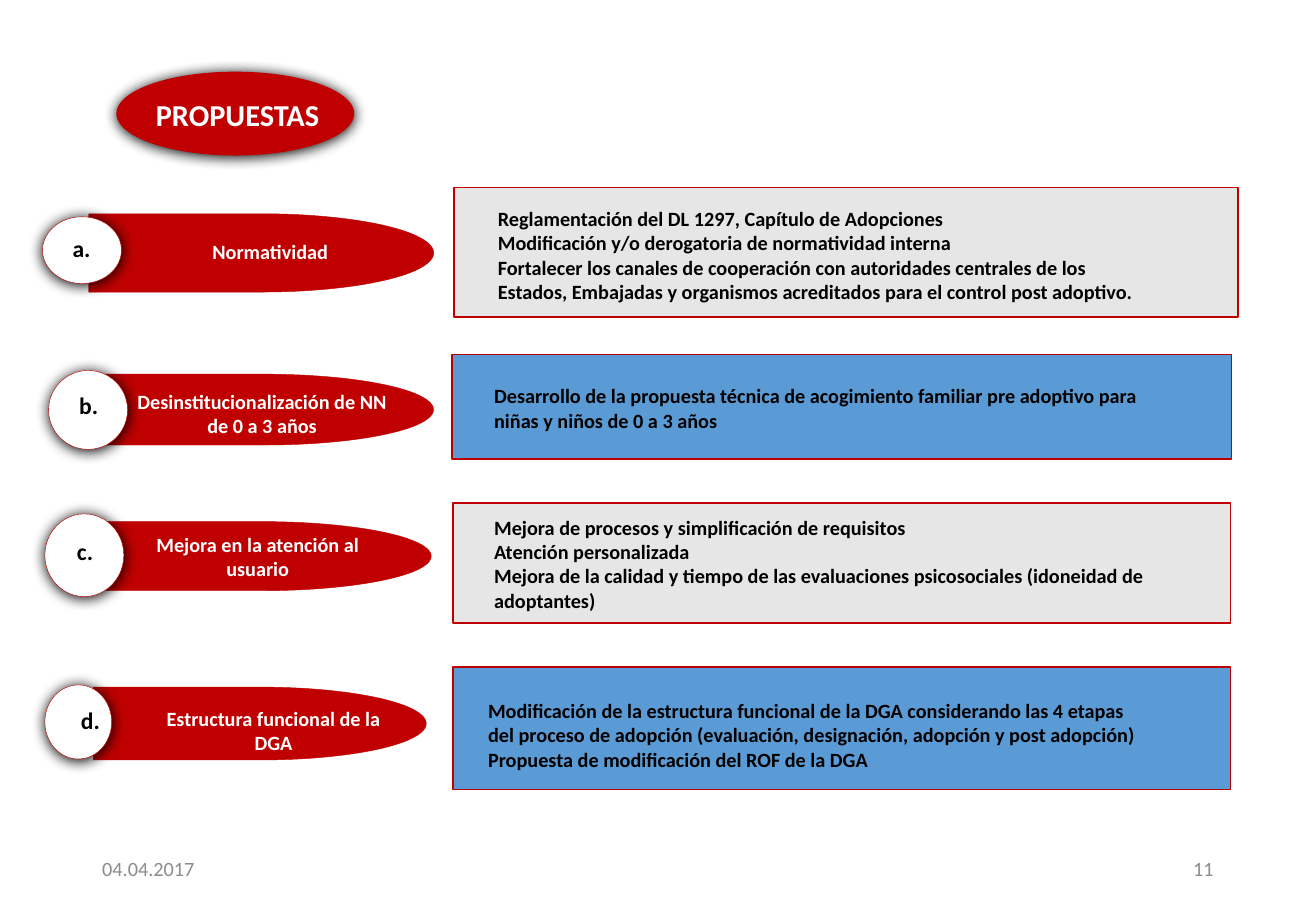
from pptx import Presentation
from pptx.dml.color import RGBColor
from pptx.enum.shapes import MSO_SHAPE
from pptx.enum.text import MSO_ANCHOR, MSO_AUTO_SIZE, PP_ALIGN
from pptx.oxml import parse_xml
from pptx.util import Pt

COLORS = {
    "red": "C00000", "gray": "E7E6E6", "blue": "5B9BD5",
    "white": "FFFFFF", "black": "000000", "footer": "8C8C8C",
}
SHADOW = (
    '<a:outerShdw xmlns:a="http://schemas.openxmlformats.org/drawingml/2006/main" '
    'blurRad="107950" dist="12700" dir="5400000" algn="ctr" rotWithShape="0">'
    '<a:srgbClr val="000000"/></a:outerShdw>'
)

prs = Presentation()
prs.slide_width, prs.slide_height = Pt(780), Pt(540)
s = prs.slides.add_slide(prs.slide_layouts[5])


def add_shape(kind, box, fill=None, line_width=0, shadow=False):
    sp = s.shapes.add_shape(kind, *map(Pt, box))
    sp.shadow.inherit = False
    if fill:
        sp.fill.solid()
        sp.fill.fore_color.rgb = RGBColor.from_string(COLORS[fill])
    else:
        sp.fill.background()
    if line_width:
        sp.line.color.rgb = RGBColor.from_string(COLORS["red"])
        sp.line.width = Pt(line_width)
    else:
        sp.line.fill.background()
    if shadow:
        sp.element.spPr.find("{*}effectLst").append(parse_xml(SHADOW))
    return sp


def write(text, box, sp=None, size=12, color="black", bold=True,
          align=PP_ALIGN.LEFT, anchor=MSO_ANCHOR.TOP):
    sp = sp or s.shapes.add_textbox(*map(Pt, box))
    sp.left, sp.top, sp.width, sp.height = map(Pt, box)
    tf = sp.text_frame
    tf.text = text
    tf.word_wrap = True
    tf.auto_size = MSO_AUTO_SIZE.NONE
    tf.vertical_anchor = anchor
    for p in tf.paragraphs:
        p.alignment = align
        font = p.runs[0].font
        font.name, font.size, font.bold = "Calibri", Pt(size), bold
        font.color.rgb = RGBColor.from_string(COLORS[color])


title = s.shapes.title
badge = add_shape(MSO_SHAPE.OVAL, (69, 42.5, 141, 49.7), "red", shadow=True)
title.element.addprevious(badge.element)
write("PROPUESTAS", (81.4, 53.3, 118.8, 28.8), title, size=18,
      color="white", align=PP_ALIGN.CENTER)

proposals = [
    ("a.", "Normatividad",
     "Reglamentación del DL 1297, Capítulo de Adopciones\n"
     "Modificación y/o derogatoria de normatividad interna\n"
     "Fortalecer los canales de cooperación con autoridades centrales de los "
     "Estados, Embajadas y organismos acreditados para el control post adoptivo.",
     (52.6, 126.7, 204.5, 46.4), (92.9, 133.9, 157.7, 31),
     (25.2, 128.5, 46.8, 39.6), (27.4, 135.4, 41.8, 24.5),
     (269.3, 111.2, 464.4, 76.7), (288, 118.8, 406, 80), "gray"),
    ("b.", "Desinstitucionalización de NN de 0 a 3 años",
     "Desarrollo de la propuesta técnica de acogimiento familiar pre adoptivo "
     "para niñas y niños de 0 a 3 años",
     (55.4, 221.8, 201.6, 42), (70.6, 219.6, 198.7, 51),
     (28.8, 219.6, 46.8, 46.8), (31.7, 228.2, 41.8, 28.8),
     (267.8, 210.2, 462.2, 61.9), (285.8, 223.9, 406, 36), "blue"),
    ("c.", "Mejora en la atención al usuario",
     "Mejora de procesos y simplificación de requisitos\n"
     "Atención personalizada\n"
     "Mejora de la calidad y tiempo de las evaluaciones psicosociales "
     "(idoneidad de adoptantes)",
     (53.3, 309.2, 202.3, 41), (77.8, 304.6, 175.7, 51),
     (26.6, 304.6, 46.8, 49), (29.5, 314.6, 41.8, 30.2),
     (268.6, 298, 460.8, 71.3), (285.8, 301.7, 406, 80), "gray"),
    ("d.", "Estructura funcional de la DGA",
     "Modificación de la estructura funcional de la DGA considerando las 4 etapas "
     "del proceso de adopción (evaluación, designación, adopción y post adopción)\n"
     "Propuesta de modificación del ROF de la DGA",
     (55.4, 407.3, 197.3, 43.2), (83.5, 407.5, 184.3, 51),
     (26.6, 406, 39.6, 43.9), (29.5, 414.7, 48.2, 24.5),
     (268.6, 395.3, 460.8, 72.7), (282.2, 410.4, 406, 51), "blue"),
]
for (letter, label, details, pill_box, label_box, disc_box, letter_box,
     panel_box, details_box, panel_fill) in proposals:
    add_shape(MSO_SHAPE.FLOWCHART_DELAY, pill_box, "red", 0.25)
    label_sp = add_shape(MSO_SHAPE.FLOWCHART_DELAY, label_box)
    write(label, label_box, label_sp, color="white", align=PP_ALIGN.CENTER)
    add_shape(MSO_SHAPE.OVAL, disc_box, "white", 0.25, shadow=True)
    write(letter, letter_box, size=14, align=PP_ALIGN.CENTER)
    add_shape(MSO_SHAPE.RECTANGLE, panel_box, panel_fill, 1)
    write(details, details_box)

for text, left, align in [("04.04.2017", 53.5, PP_ALIGN.LEFT),
                          ("11", 551, PP_ALIGN.RIGHT)]:
    write(text, (left, 500.4, 175.5, 28.8), color="footer", bold=False,
          align=align, anchor=MSO_ANCHOR.MIDDLE)

prs.save("out.pptx")
